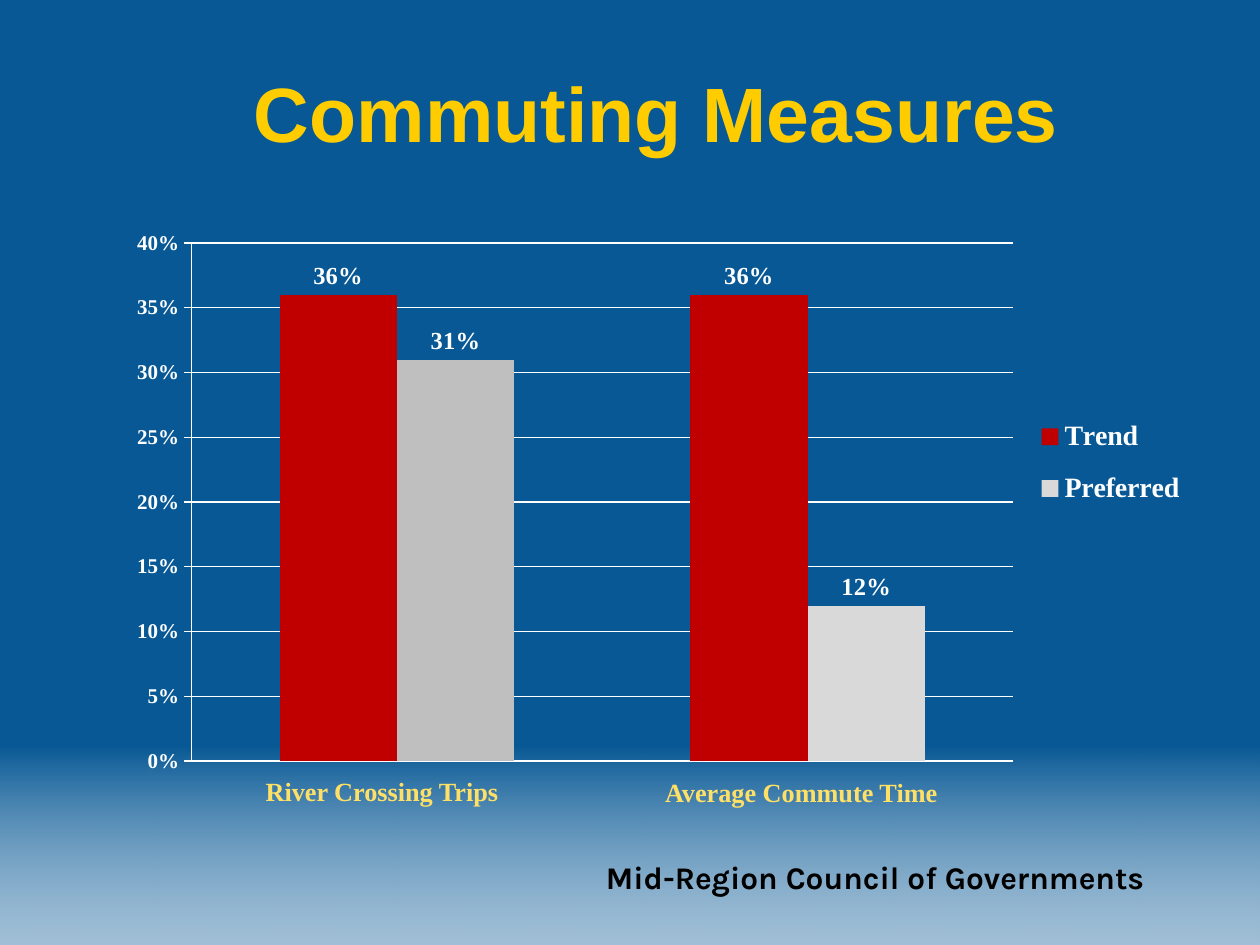
from dataclasses import dataclass

from lxml import etree
from pptx import Presentation
from pptx.chart.data import CategoryChartData
from pptx.dml.color import RGBColor as Rgb
from pptx.enum import chart as ch, shapes, text
from pptx.oxml import ns
from pptx.util import Inches, Pt


@dataclass(frozen=True)
class Theme:
    blue: str = "075895"
    gold: str = "FFCC00"
    sand: str = "FFE066"
    white: str = "FFFFFF"
    black: str = "000000"
    red: str = "C00000"
    light: str = "D9D9D9"
    gray: str = "BFBFBF"
    sans: str = "Arial"
    serif: str = "Times New Roman"
    brand: str = "Karla"
    title: int = 44
    foot: int = 18
    legend: int = 16
    label: int = 15
    value: int = 14
    axis: int = 12
    base: int = 10


@dataclass(frozen=True)
class Label:
    words: str
    box: tuple[float, float, float, float]
    size: int
    face: str
    color: str
    center: bool = False
    wrap: bool = True


@dataclass(frozen=True)
class Series:
    name: str
    vals: tuple[float, ...]
    color: str


T = Theme()
LABELS = [
    Label("Mid-Region Council of Governments", (4.71, 6.76, 4.72, 0.4),
          T.foot, T.brand, T.black, wrap=False),
    Label("Commuting Measures", (0.92, 0.26, 8.58, 1.25),
          T.title, T.sans, T.gold, center=True),
    Label("Average Commute Time", (5.18, 6.11, 2.67, 0.42), T.label, T.serif, T.sand),
    Label("River Crossing Trips", (2.01, 6.1, 2.63, 0.42), T.label, T.serif, T.sand),
]
SERIES = [
    Series("Trend", (0.36, 0.36), T.red),
    Series("Preferred", (0.31, 0.12), T.light),
]


def style(font, size: int, face: str, color: str, bold: bool = True) -> None:
    font.size, font.name, font.bold = Pt(size), face, bold
    font.color.rgb = Rgb.from_string(color)


def paint(fill, color: str) -> None:
    fill.solid()
    fill.fore_color.rgb = Rgb.from_string(color)


def write(slide, item: Label) -> None:
    box = slide.shapes.add_textbox(*map(Inches, item.box))
    frame = box.text_frame
    frame.text = item.words
    frame.word_wrap = item.wrap
    para = frame.paragraphs[0]
    if item.center:
        frame.vertical_anchor = text.MSO_ANCHOR.MIDDLE
        para.alignment = text.PP_ALIGN.CENTER
    style(para.runs[0].font, item.size, item.face, item.color)


def fade(slide) -> None:
    band = slide.shapes.add_shape(shapes.MSO_SHAPE.RECTANGLE, Inches(0), Inches(5.9),
                                  Inches(10), Inches(1.6))
    band.shadow.inherit = False
    band.line.fill.background()
    band.fill.gradient()
    band.fill.gradient_angle = 270
    for stop, color, at in zip(band.fill.gradient_stops, (T.blue, T.white), (0, 1)):
        stop.color.rgb = Rgb.from_string(color)
        stop.position = at
    last = band._element.spPr.findall(".//" + ns.qn("a:srgbClr"))[-1]
    etree.SubElement(last, ns.qn("a:alpha")).set("val", "62000")


def place(part, x: float, y: float, w: float, h: float, inner: bool = False) -> None:
    """Set a manual layout, in fractions of the chart."""
    lay = part.get_or_add_layout() if hasattr(part, "get_or_add_layout") else None
    if lay is None:
        lay = part.find(ns.qn("c:layout"))
    if lay is None:
        lay = etree.Element(ns.qn("c:layout"))
        part.insert(0, lay)
    for old in list(lay):
        lay.remove(old)
    man = etree.SubElement(lay, ns.qn("c:manualLayout"))
    rows = [("layoutTarget", "inner")] if inner else []
    rows += [("xMode", "edge"), ("yMode", "edge"), ("x", x), ("y", y), ("w", w), ("h", h)]
    for tag, val in rows:
        etree.SubElement(man, ns.qn("c:" + tag)).set("val", str(val))


def plot(slide) -> None:
    data = CategoryChartData(number_format="0%")
    data.categories = ["1", "2"]
    for item in SERIES:
        data.add_series(item.name, item.vals)
    chart = slide.shapes.add_chart(
        ch.XL_CHART_TYPE.COLUMN_CLUSTERED, Inches(0.92), Inches(1.75),
        Inches(8.58), Inches(4.47), data).chart
    style(chart.font, T.base, T.serif, T.white, False)
    chart.has_title = False

    # Axes
    chart.category_axis.visible = False
    axis = chart.value_axis
    axis.minimum_scale, axis.maximum_scale, axis.major_unit = 0, 0.4, 0.05
    axis.major_tick_mark = ch.XL_TICK_MARK.OUTSIDE
    axis.has_major_gridlines = True
    axis.tick_labels.number_format = "0%"
    axis.tick_labels.number_format_is_linked = False
    style(axis.tick_labels.font, T.axis, T.serif, T.white)
    for line in (axis.format.line, axis.major_gridlines.format.line):
        paint(line.fill, T.white)
        line.width = Pt(0.75)

    # Columns and their values
    bars = chart.plots[0]
    bars.gap_width, bars.overlap, bars.vary_by_categories = 150, 0, False
    for ser, item in zip(bars.series, SERIES):
        paint(ser.format.fill, item.color)
        tags = ser.data_labels
        tags.show_value = True
        tags.number_format, tags.number_format_is_linked = "0%", False
        tags.position = ch.XL_LABEL_POSITION.OUTSIDE_END
        style(tags.font, T.value, T.serif, T.white)
    paint(bars.series[1].points[0].format.fill, T.gray)

    # Legend
    chart.has_legend = True
    key = chart.legend
    key.position = ch.XL_LEGEND_POSITION.RIGHT
    key.include_in_layout = False
    style(key.font, T.legend, T.serif, T.white)
    root = chart._chartSpace
    place(root.find(".//" + ns.qn("c:plotArea")), 0.07, 0.04, 0.76, 0.92, True)
    spot = root.find(".//" + ns.qn("c:legend"))
    if spot.find(ns.qn("c:layout")) is None:
        spot.find(ns.qn("c:legendPos")).addnext(etree.Element(ns.qn("c:layout")))
    place(spot, 0.84, 0.32, 0.16, 0.22)


def main() -> None:
    deck = Presentation()
    deck.slide_width, deck.slide_height = Inches(10), Inches(7.5)
    slide = deck.slides.add_slide(deck.slide_layouts[6])
    paint(slide.background.fill, T.blue)
    fade(slide)
    for item in LABELS:
        write(slide, item)
    plot(slide)
    deck.save("out.pptx")


if __name__ == "__main__":
    main()
